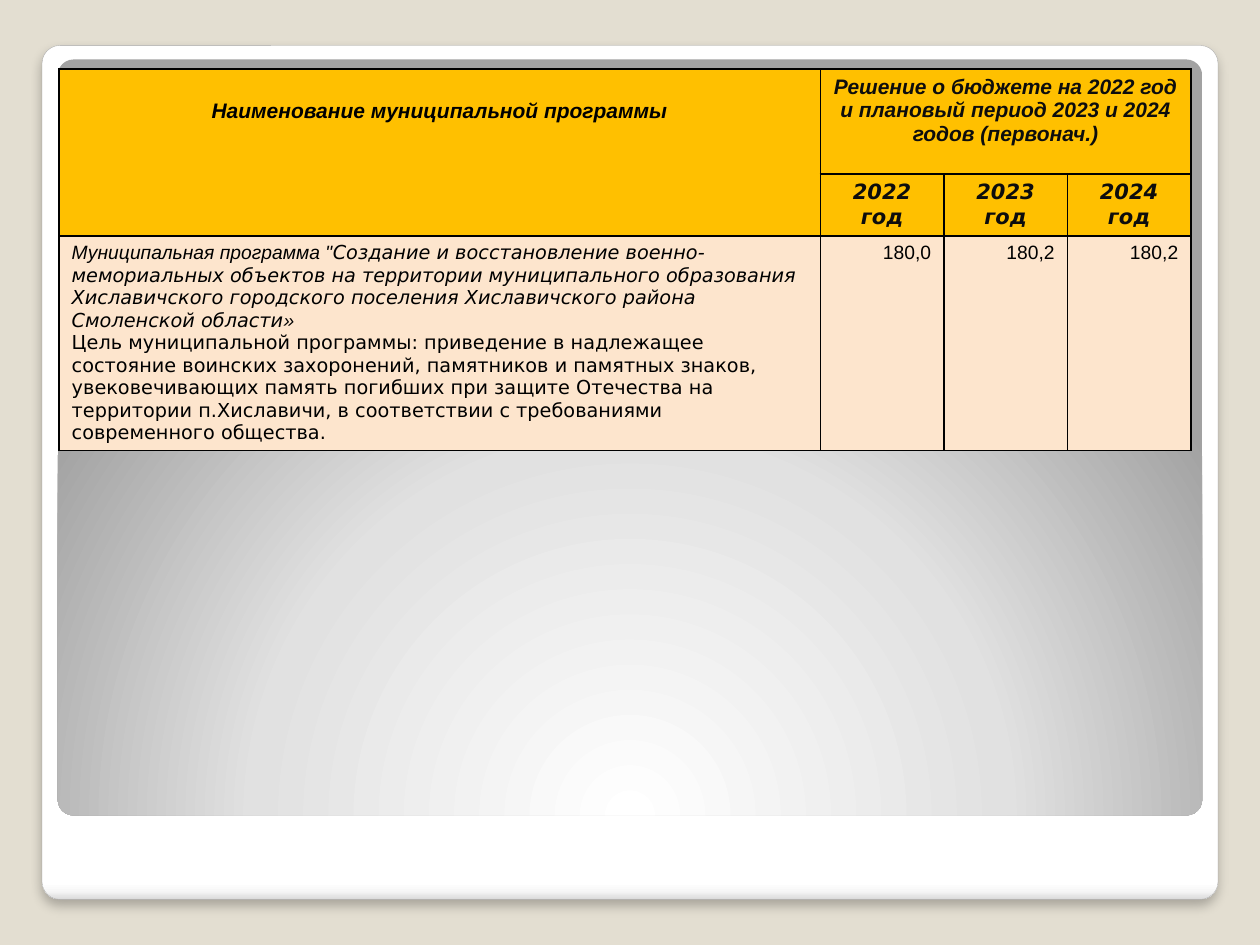
from dataclasses import dataclass

from lxml.etree import SubElement
from pptx import Presentation
from pptx.dml.color import RGBColor
from pptx.enum.shapes import MSO_SHAPE
from pptx.enum.text import PP_ALIGN
from pptx.oxml import parse_xml
from pptx.oxml.ns import nsdecls, qn
from pptx.util import Pt

BLACK = "000000"
HEADER_FILL = "FFC000"
BODY_FILL = "FDE5CD"
SANS = "DejaVu Sans"


@dataclass
class Panel:
    left: float
    top: float
    width: float
    height: float
    stops: list[tuple[int, str]]
    direction: str
    outline: str | None = None
    shaded: bool = False


@dataclass
class YearColumn:
    year: str
    amount: str


PANELS = [
    Panel(24, 26, 672, 488,
          [(0, "FFFFFF"), (98, "FFFFFF"), (99, "F7F7F7"), (100, "DADADA")],
          '<a:lin ang="5400000" scaled="0"/>', outline="A4A4A4", shaded=True),
    Panel(33, 34, 654, 432,
          [(0, "FFFFFF"), (55, "E1E1E1"), (100, "A2A2A2")],
          '<a:path path="circle"><a:fillToRect l="50000" t="175000" '
          'r="50000" b="-75000"/></a:path>'),
]
YEARS = [YearColumn("2022", "180,0"), YearColumn("2023", "180,2"), YearColumn("2024", "180,2")]


def color(value: str) -> RGBColor:
    return RGBColor.from_string(value)


def write(paragraph, text: str, *, size: float = 12, font: str = "Arial", ink: str = BLACK,
          bold: bool = False, italic: bool = False, align=PP_ALIGN.LEFT) -> None:
    paragraph.alignment = align
    run = paragraph.add_run()
    run.text = text
    run.font.size = Pt(size)
    run.font.name = font
    run.font.bold = bold
    run.font.italic = italic
    run.font.color.rgb = color(ink)


def draw_panel(slide, panel: Panel) -> None:
    shape = slide.shapes.add_shape(MSO_SHAPE.ROUNDED_RECTANGLE, Pt(panel.left), Pt(panel.top),
                                   Pt(panel.width), Pt(panel.height))
    shape.adjustments[0] = 0.021
    shape.shadow.inherit = False
    if panel.outline:
        shape.line.color.rgb = color(panel.outline)
        shape.line.width = Pt(0.16)
    else:
        shape.line.fill.background()
    properties = shape._element.spPr
    stops = "".join(f'<a:gs pos="{position * 1000}"><a:srgbClr val="{value}"/></a:gs>'
                    for position, value in panel.stops)
    properties.find(qn("a:prstGeom")).addnext(parse_xml(
        f'<a:gradFill {nsdecls("a")} rotWithShape="1"><a:gsLst>{stops}</a:gsLst>'
        f'{panel.direction}</a:gradFill>'))
    if panel.shaded:
        properties.find(qn("a:effectLst")).append(parse_xml(
            f'<a:outerShdw {nsdecls("a")} blurRad="{Pt(6)}" dist="{Pt(4)}" dir="5400000" '
            f'algn="tl" rotWithShape="0"><a:srgbClr val="{BLACK}"><a:alpha val="25000"/>'
            '</a:srgbClr></a:outerShdw>'))


def style_cell(cell, fill: str) -> None:
    cell.fill.solid()
    cell.fill.fore_color.rgb = color(fill)
    properties = cell._tc.get_or_add_tcPr()
    for position, side in enumerate(("lnL", "lnR", "lnT", "lnB")):
        border = SubElement(properties, qn(f"a:{side}"), w=str(Pt(1)))
        ink = SubElement(border, qn("a:solidFill"))
        SubElement(ink, qn("a:srgbClr"), val=BLACK)
        properties.insert(position, border)


def draw_budget(slide) -> None:
    column_widths = [435] + [70.6] * len(YEARS)
    row_heights = [60, 33, 117]
    budget = slide.shapes.add_table(len(row_heights), len(column_widths), Pt(33.8), Pt(39.4),
                                    Pt(sum(column_widths)), Pt(sum(row_heights))).table
    budget.first_row = False
    budget.horz_banding = False
    for column, width in zip(budget.columns, column_widths):
        column.width = Pt(width)
    for index, (row, height) in enumerate(zip(budget.rows, row_heights)):
        row.height = Pt(height)
        for cell in row.cells:
            style_cell(cell, HEADER_FILL if index < 2 else BODY_FILL)

    heading = dict(bold=True, italic=True, align=PP_ALIGN.CENTER)
    program_heading = budget.cell(0, 0)
    program_heading.merge(budget.cell(1, 0))
    program_heading.margin_top = Pt(17.4)
    write(program_heading.text_frame.paragraphs[0], "Наименование муниципальной программы", **heading)

    decision_heading = budget.cell(0, 1)
    decision_heading.merge(budget.cell(0, len(YEARS)))
    write(decision_heading.text_frame.paragraphs[0],
          "Решение о бюджете на 2022 год и плановый период 2023 и 2024 годов (первонач.)",
          ink="0D0D0D", **heading)

    for index, entry in enumerate(YEARS, start=1):
        write(budget.cell(1, index).text_frame.paragraphs[0], f"{entry.year} год",
              font=SANS, ink="0D0D0D", **heading)
        write(budget.cell(2, index).text_frame.paragraphs[0], entry.amount,
              size=11, align=PP_ALIGN.RIGHT)

    program = budget.cell(2, 0).text_frame
    title = program.paragraphs[0]
    write(title, 'Муниципальная программа "', size=11, italic=True)
    write(title, "Создание и восстановление военно-мемориальных объектов на территории "
          "муниципального образования Хиславичского городского поселения "
          "Хиславичского района Смоленской области", size=11, font=SANS, italic=True)
    write(title, "»", size=11, italic=True)
    write(program.add_paragraph(),
          "Цель муниципальной программы: приведение в надлежащее состояние воинских "
          "захоронений, памятников и памятных знаков, увековечивающих память погибших при "
          "защите Отечества на территории п.Хиславичи, в соответствии с требованиями "
          "современного общества.", size=11, font=SANS)


def main() -> None:
    presentation = Presentation()
    presentation.slide_width = Pt(720)
    presentation.slide_height = Pt(540)
    slide = presentation.slides.add_slide(presentation.slide_layouts[6])
    slide.background.fill.solid()
    slide.background.fill.fore_color.rgb = color("E3DED1")
    for panel in PANELS:
        draw_panel(slide, panel)
    draw_budget(slide)
    presentation.save("out.pptx")


if __name__ == "__main__":
    main()
